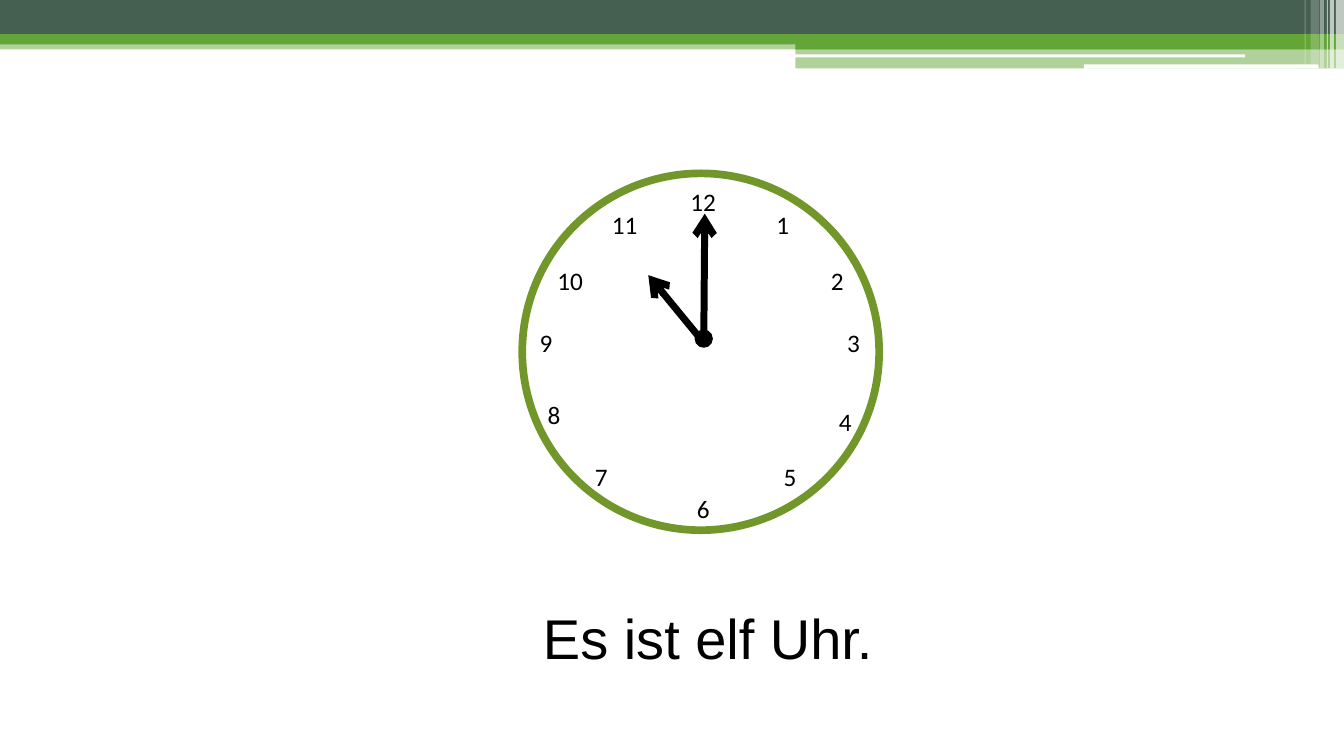
from lxml import etree
from pptx import Presentation
from pptx.dml.color import RGBColor
from pptx.enum.shapes import MSO_CONNECTOR, MSO_SHAPE
from pptx.enum.text import MSO_ANCHOR, MSO_AUTO_SIZE, PP_ALIGN
from pptx.oxml.ns import qn
from pptx.util import Inches, Pt

RECT, ROUND, OVAL = MSO_SHAPE.RECTANGLE, MSO_SHAPE.ROUNDED_RECTANGLE, MSO_SHAPE.OVAL
LINE, TOP, CENTER = MSO_CONNECTOR.STRAIGHT, MSO_ANCHOR.TOP, PP_ALIGN.CENTER
FIT = MSO_AUTO_SIZE.SHAPE_TO_FIT_TEXT
GREEN = RGBColor(0x63, 0xA5, 0x37)
DARK = RGBColor(0x45, 0x5F, 0x51)
RING = RGBColor(0x71, 0x96, 0x29)
WHITE = RGBColor(0xFF, 0xFF, 0xFF)
BLACK = RGBColor(0, 0, 0)

prs = Presentation()
prs.slide_width, prs.slide_height = Inches(13.33), Inches(7.5)
slide = prs.slides.add_slide(prs.slide_layouts[5])
shapes = slide.shapes


def add_form(kind, box, color=None, alpha=100):
    form = shapes.add_shape(kind, *map(Inches, box))
    form.shadow.inherit = False
    form.line.fill.background()
    if color is None:
        form.fill.background()
        return form
    form.fill.solid()
    form.fill.fore_color.rgb = color
    if alpha < 100:
        tint = form.fill._xPr.find(".//" + qn("a:srgbClr"))
        etree.SubElement(tint, qn("a:alpha"), val=str(alpha * 1000))
    return form


def set_text(box, text, font, size):
    frame = box.text_frame
    frame.word_wrap = True
    frame.auto_size = FIT
    frame.vertical_anchor = TOP
    par = frame.paragraphs[0]
    par.alignment = CENTER
    run = par.add_run()
    run.text = text
    run.font.name, run.font.size = font, Pt(size)
    run.font.color.rgb = BLACK


# Header bands
for kind, box, color, alpha in [
    (RECT, (0, 0.4, 13.33, 0.09), GREEN, 50),
    (RECT, (0, 0, 13.33, 0.34), DARK, 100),
    (RECT, (0, 0.34, 13.33, 0.1), GREEN, 100),
    (RECT, (7.89, 0.39, 5.44, 0.1), GREEN, 100),
    (RECT, (7.89, 0.48, 5.44, 0.2), GREEN, 50),
    (ROUND, (7.88, 0.54, 4.47, 0.03), WHITE, 100),
    (ROUND, (10.75, 0.64, 2.33, 0.04), WHITE, 100),
]:
    add_form(kind, box, color, alpha)

# Pale stripes at the right end of the header
for left, width, height, alpha in [
    (13.25, 0.08, 0.68, 65),
    (13.19, 0.04, 0.68, 65),
    (13.16, 0.01, 0.68, 60),
    (13.09, 0.04, 0.68, 40),
    (13, 0.08, 0.64, 20),
    (12.94, 0.01, 0.64, 30),
]:
    add_form(RECT, (left, 0, width, height), WHITE, alpha)

# Clock face
face = add_form(OVAL, (5.18, 1.72, 3.54, 3.54))
face.line.color.rgb = RING
face.line.width = Pt(5.5)

# Hours from 1 to 12
spots = [(7.53, 2.03), (8.07, 2.58), (8.23, 3.2), (8.15, 3.98),
         (7.6, 4.53), (6.74, 4.84), (5.73, 4.53), (5.26, 3.91),
         (5.18, 3.2), (5.42, 2.58), (5.96, 2.03), (6.74, 1.8)]
for hour, (left, top) in enumerate(spots, 1):
    label = shapes.add_textbox(Inches(left), Inches(top), Inches(0.47), Inches(0.4))
    set_text(label, str(hour), "Calibri", 18)

# Hands and hub
for tip in [(6.43, 2.73), (6.99, 2.12)]:
    hand = shapes.add_connector(LINE, *map(Inches, (6.98, 3.4, *tip)))
    hand.line.color.rgb = BLACK
    hand.line.width = Pt(5)
    etree.SubElement(hand.line._get_or_add_ln(), qn("a:tailEnd"), type="arrow")
    etree.SubElement(hand._element.spPr, qn("a:effectLst"))

hub = add_form(OVAL, (6.9, 3.28, 0.16, 0.16), BLACK)
hub.line.color.rgb = BLACK
hub.line.width = Pt(1.5)

# Sentence
title = shapes.title
title.left, title.top = Inches(4.17), Inches(5.94)
title.width, title.height = Inches(5.7), Inches(0.77)
set_text(title, "Es ist elf Uhr.", "Arial", 40)

prs.save("out.pptx")
